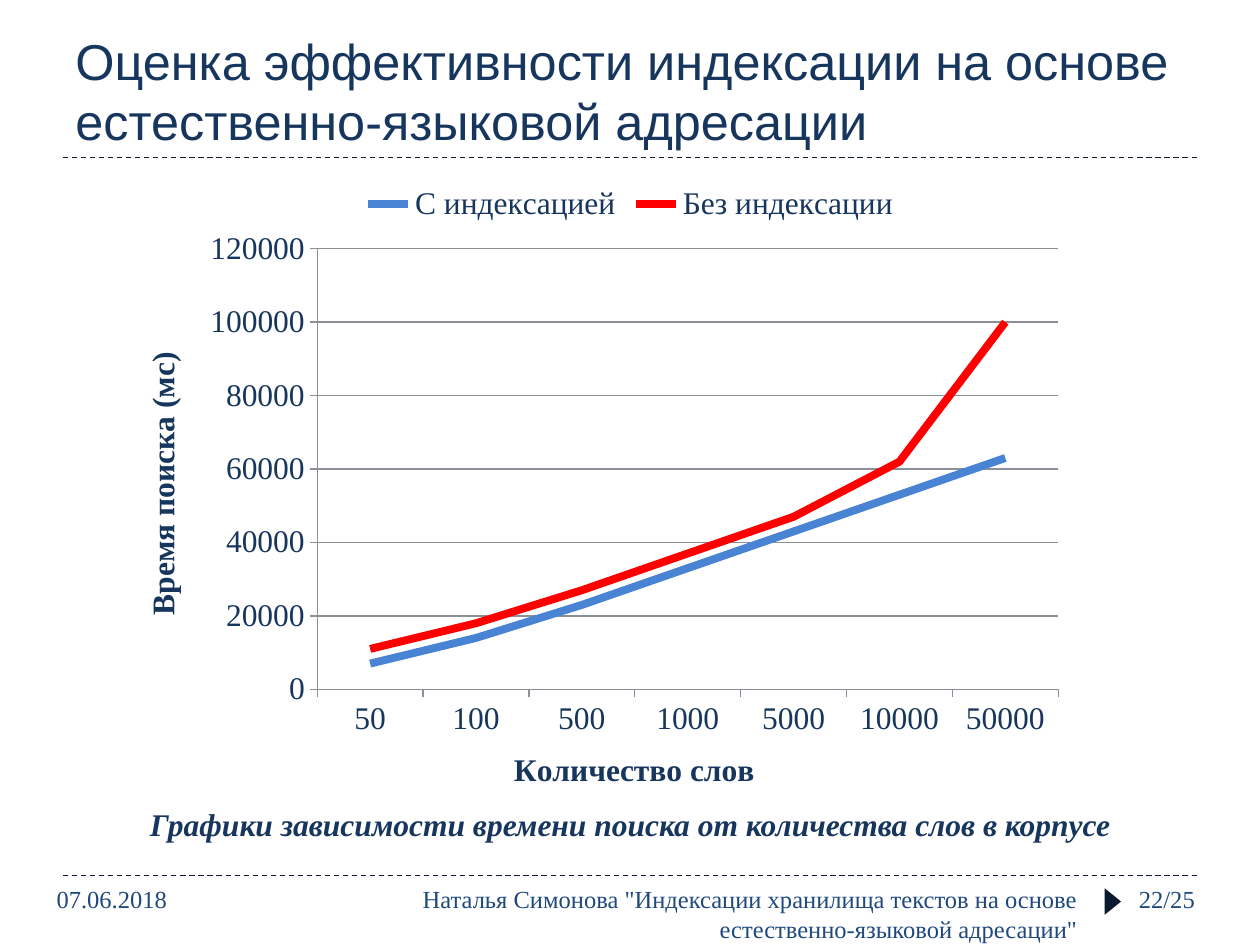
from lxml import etree
from pptx import Presentation
from pptx.chart.data import CategoryChartData
from pptx.dml.color import RGBColor
from pptx.enum.chart import XL_CHART_TYPE, XL_LEGEND_POSITION, XL_MARKER_STYLE, XL_TICK_MARK
from pptx.enum.dml import MSO_LINE
from pptx.enum.shapes import MSO_CONNECTOR, MSO_SHAPE
from pptx.enum.text import MSO_ANCHOR, PP_ALIGN
from pptx.oxml.ns import qn
from pptx.util import Cm, Pt

LINE = XL_CHART_TYPE.LINE
TOP = XL_LEGEND_POSITION.TOP
BARE = XL_MARKER_STYLE.NONE
OUT = XL_TICK_MARK.OUTSIDE
NONE = XL_TICK_MARK.NONE
DASH = MSO_LINE.DASH
STRAIGHT = MSO_CONNECTOR.STRAIGHT
ARROW = MSO_SHAPE.ISOSCELES_TRIANGLE
UPPER, BASE = MSO_ANCHOR.TOP, MSO_ANCHOR.BOTTOM
LEFT, RIGHT, MID = PP_ALIGN.LEFT, PP_ALIGN.RIGHT, PP_ALIGN.CENTER

NIGHT = RGBColor(0x0B, 0x1A, 0x2E)
NAVY = RGBColor(0x17, 0x36, 0x5D)
BLUE = RGBColor(0x1F, 0x49, 0x7D)
SKY = RGBColor(0x48, 0x84, 0xD3)
RED = RGBColor(0xFF, 0x00, 0x00)
GREY = RGBColor(0x8B, 0x8F, 0x98)

SERIF = "Times New Roman"
HEAD = {"name": "Arial", "size": Pt(28.8)}
NOTE = {"name": SERIF, "size": Pt(18), "bold": True, "italic": True}
FOOT = {"name": SERIF, "size": Pt(14)}
PLAIN = {"name": SERIF, "size": Pt(18), "bold": False}
BOLD = {"name": SERIF, "size": Pt(18), "bold": True}

WORDS = ["50", "100", "500", "1000", "5000", "10000", "50000"]
TIMES = [
    ("С индексацией", SKY, [7000, 14000, 23000, 33000, 43000, 53000, 63000]),
    ("Без индексации", RED, [11000, 18000, 27000, 37000, 47000, 62000, 100000]),
]
PLOT = {"x": 0.187, "y": 0.124, "w": 0.74, "h": 0.704}


def style(font, look, color):
    for key, value in look.items():
        setattr(font, key, value)
    font.color.rgb = color


def add_text(slide, text, box, look, color, align=LEFT, anchor=UPPER, wrap=True):
    frame = slide.shapes.add_textbox(*map(Cm, box)).text_frame
    frame.word_wrap = wrap
    frame.vertical_anchor = anchor
    para = frame.paragraphs[0]
    para.alignment = align
    run = para.add_run()
    run.text = text
    style(run.font, look, color)


def add_rule(slide, top):
    rule = slide.shapes.add_connector(STRAIGHT, Cm(1.27), Cm(top), Cm(24.13), Cm(top))
    for key, value in {"width": Pt(0.75), "dash_style": DASH}.items():
        setattr(rule.line, key, value)
    rule.line.color.rgb = NIGHT
    etree.SubElement(rule.element.spPr, qn("a:effectLst"))


def add_arrow(slide):
    arrow = slide.shapes.add_shape(ARROW, Cm(22.17), Cm(18.01), Cm(0.53), Cm(0.33))
    arrow.rotation = 90
    arrow.shadow.inherit = False
    arrow.fill.solid()
    arrow.fill.fore_color.rgb = NIGHT
    arrow.line.fill.background()


def set_plot(chart):
    area = chart.element.chart.plotArea
    for old in area.findall(qn("c:layout")):
        area.remove(old)
    layout = etree.Element(qn("c:layout"))
    area.insert(0, layout)
    manual = etree.SubElement(layout, qn("c:manualLayout"))
    modes = {"layoutTarget": "inner", "xMode": "edge", "yMode": "edge"}
    for tag, value in {**modes, **PLOT}.items():
        etree.SubElement(manual, qn("c:" + tag)).set("val", str(value))


def set_axis(axis, title):
    form = {"major_tick_mark": OUT, "minor_tick_mark": NONE}
    for key, value in form.items():
        setattr(axis, key, value)
    axis.format.line.color.rgb = GREY
    style(axis.tick_labels.font, PLAIN, NAVY)
    frame = axis.axis_title.text_frame
    frame.text = title
    style(frame.paragraphs[0].runs[0].font, BOLD, NAVY)


def add_graph(slide):
    data = CategoryChartData(number_format="General")
    data.categories = WORDS
    for name, _, values in TIMES:
        data.add_series(name, values)
    box = map(Cm, (2.62, 3.45, 20.19, 12.62))
    chart = slide.shapes.add_chart(LINE, *box, data).chart
    style(chart.font, PLAIN, NAVY)
    chart.has_title = False
    chart.has_legend = True
    for key, value in {"position": TOP, "include_in_layout": False}.items():
        setattr(chart.legend, key, value)
    style(chart.legend.font, PLAIN, NAVY)
    set_axis(chart.category_axis, "Количество слов")
    scale = chart.value_axis
    set_axis(scale, "Время поиска (мс)")
    limits = {"minimum_scale": 0, "maximum_scale": 120000, "major_unit": 20000}
    for key, value in limits.items():
        setattr(scale, key, value)
    scale.major_gridlines.format.line.color.rgb = GREY
    chart.plots[0].vary_by_categories = False
    for series, (_, color, _) in zip(chart.plots[0].series, TIMES):
        series.smooth = False
        series.marker.style = BARE
        series.format.line.width = Pt(4.5)
        series.format.line.color.rgb = color
    set_plot(chart)


def main():
    deck = Presentation()
    deck.slide_width, deck.slide_height = Cm(25.4), Cm(19.05)
    slide = deck.slides.add_slide(deck.slide_layouts[6])
    for top in (17.65, 3.18):
        add_rule(slide, top)
    add_arrow(slide)
    add_text(slide, "Оценка эффективности индексации на основе естественно-языковой адресации",
             (1.27, 0.43, 22.86, 2.74), HEAD, NAVY, anchor=BASE)
    add_graph(slide)
    add_text(slide, "Графики зависимости времени поиска от количества слов в корпусе",
             (2.59, 16.1, 20.24, 1.02), NOTE, NAVY, align=MID, wrap=False)
    add_text(slide, "07.06.2018", (0.89, 17.7, 6.35, 1.02), FOOT, BLUE)
    add_text(slide, "Наталья Симонова \"Индексации хранилища текстов на основе "
             "естественно-языковой адресации\"",
             (7.29, 17.7, 14.68, 1.02), FOOT, BLUE, align=RIGHT)
    add_text(slide, "22/25", (22.71, 17.7, 1.88, 1.02), FOOT, BLUE)
    deck.save("out.pptx")


if __name__ == "__main__":
    main()
